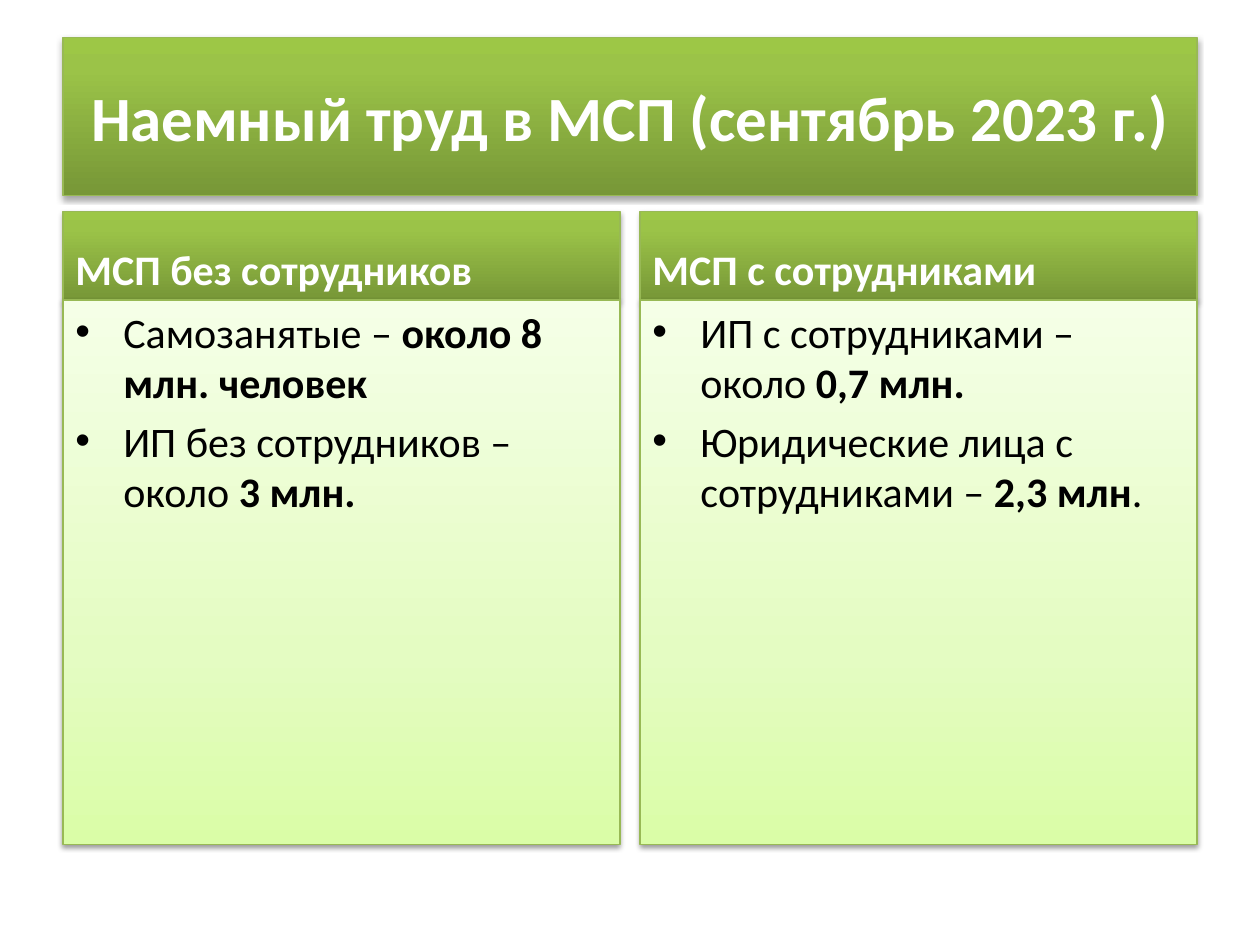
from dataclasses import dataclass

from lxml import etree
from pptx import Presentation
from pptx import util as u
from pptx.dml.color import RGBColor
from pptx.enum import shapes, text
from pptx.oxml.ns import qn


@dataclass(frozen=True)
class Theme:
    font: str = "Calibri"
    title_size: int = 36
    text_size: int = 24
    light_text: str = "FFFFFF"
    dark_text: str = "000000"
    border: str = "98B955"
    shadow: str = "000000"
    # Gradients run from bottom to top: (position in percent, colour)
    strong: tuple = ((0, "779737"), (80, "9BC348"), (100, "9DC746"))
    soft: tuple = ((0, "DAFDA7"), (35, "E4FCC2"), (100, "F5FFE7"))


THEME = Theme()
TITLE = "Наемный труд в МСП (сентябрь 2023 г.)"
# Each bullet is a list of (words, bold) runs
COLUMNS = [
    ("МСП без сотрудников", [
        [("Самозанятые – ", False), ("около 8 млн. человек", True)],
        [("ИП без сотрудников – около ", False), ("3 млн.", True)],
    ]),
    ("МСП с сотрудниками", [
        [("ИП с сотрудниками – около ", False), ("0,7 млн.", True)],
        [("Юридические лица с сотрудниками – ", False), ("2,3 млн", True), (".", False)],
    ]),
]


def add_child(parent, tag, **attributes):
    return etree.SubElement(parent, qn(tag), attributes)


def style_panel(shape, stops, opacity, distance):
    """Gradient fill, thin border and soft shadow below."""
    shape.fill.gradient()
    shape.fill.gradient_angle = 90
    stop_list = shape._element.spPr.find(qn("a:gradFill")).find(qn("a:gsLst"))
    for stop in list(stop_list):
        stop_list.remove(stop)
    for position, color in stops:
        stop = add_child(stop_list, "a:gs", pos=str(position * 1000))
        add_child(stop, "a:srgbClr", val=color)

    shape.line.color.rgb = RGBColor.from_string(THEME.border)
    shape.line.width = u.Pt(0.75)

    shape.shadow.inherit = False
    effects = shape._element.spPr.find(qn("a:effectLst"))
    shadow = add_child(effects, "a:outerShdw", blurRad=str(u.Pt(3.1)),
                       dist=str(u.Pt(distance)), dir="5400000", rotWithShape="0")
    color = add_child(shadow, "a:srgbClr", val=THEME.shadow)
    add_child(color, "a:alpha", val=str(opacity * 1000))


def write_text(shape, paragraphs, *, size, color, anchor, align=text.PP_ALIGN.LEFT,
               space_before=0, bullet_indent=None):
    frame = shape.text_frame
    frame.word_wrap = True
    frame.auto_size = text.MSO_AUTO_SIZE.NONE
    frame.vertical_anchor = anchor
    for index, runs in enumerate(paragraphs):
        paragraph = frame.add_paragraph() if index else frame.paragraphs[0]
        paragraph.alignment = align
        paragraph.space_before = u.Pt(space_before)
        if bullet_indent:
            properties = paragraph._p.get_or_add_pPr()
            properties.set("marL", str(bullet_indent))
            properties.set("indent", str(-bullet_indent))
            add_child(properties, "a:buFont", typeface="Arial")
            add_child(properties, "a:buChar", char="•")
        for words, bold in runs:
            run = paragraph.add_run()
            run.text = words
            run.font.name = THEME.font
            run.font.size = u.Pt(size)
            run.font.bold = bold
            run.font.color.rgb = RGBColor.from_string(color)


def place_title(slide, left, top, width, height):
    title = slide.shapes.title
    title.left, title.top, title.width, title.height = left, top, width, height
    style_panel(title, THEME.strong, opacity=35, distance=1.8)
    write_text(title, [[(TITLE, True)]], size=THEME.title_size, color=THEME.light_text,
               anchor=text.MSO_ANCHOR.MIDDLE, align=text.PP_ALIGN.CENTER)


def add_column(slide, heading, bullets, left, top, width, height):
    heading_height = u.Inches(0.7)
    spacing = THEME.text_size * 0.2

    # Heading band
    band = slide.shapes.add_shape(shapes.MSO_SHAPE.RECTANGLE,
                                  left, top, width, heading_height)
    style_panel(band, THEME.strong, opacity=35, distance=1.8)
    write_text(band, [[(heading, True)]], size=THEME.text_size, color=THEME.light_text,
               anchor=text.MSO_ANCHOR.BOTTOM, space_before=spacing)

    # Bullet panel
    panel = slide.shapes.add_shape(shapes.MSO_SHAPE.RECTANGLE, left, top + heading_height,
                                   width, height - heading_height)
    style_panel(panel, THEME.soft, opacity=38, distance=1.6)
    write_text(panel, bullets, size=THEME.text_size, color=THEME.dark_text,
               anchor=text.MSO_ANCHOR.TOP, space_before=spacing,
               bullet_indent=u.Inches(0.38))


def main():
    presentation = Presentation()
    presentation.slide_width = u.Inches(10)
    presentation.slide_height = u.Inches(7.5)
    slide = presentation.slides.add_slide(presentation.slide_layouts[5])

    margin, content_width = u.Inches(0.5), u.Inches(9)
    place_title(slide, margin, u.Inches(0.3), content_width, u.Inches(1.25))

    # Equal columns across the content width
    gap = u.Inches(0.16)
    column_width = (content_width - gap * (len(COLUMNS) - 1)) // len(COLUMNS)
    for index, (heading, bullets) in enumerate(COLUMNS):
        add_column(slide, heading, bullets, margin + index * (column_width + gap),
                   u.Inches(1.68), column_width, u.Inches(5.02))

    presentation.save("out.pptx")


if __name__ == "__main__":
    main()
